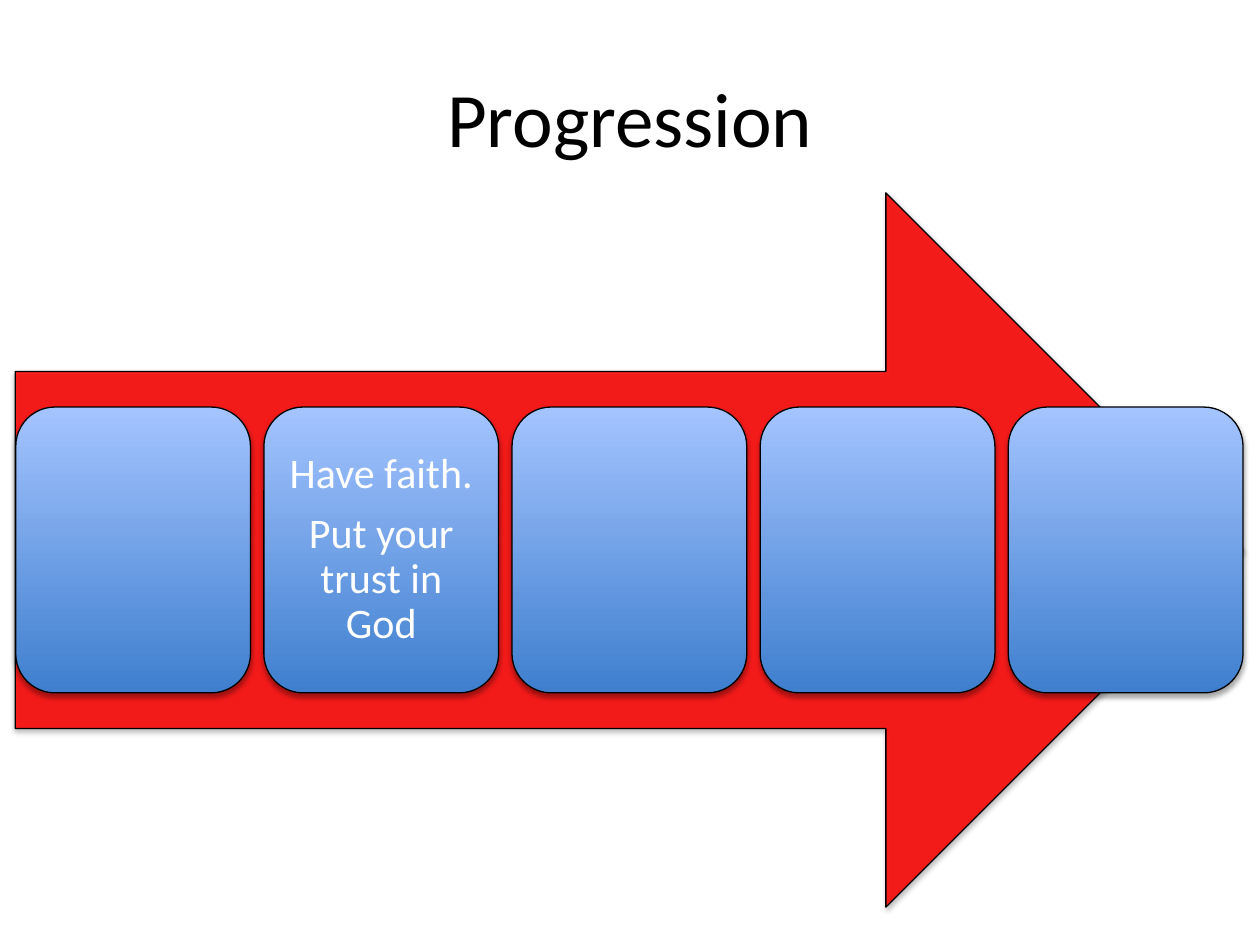
from dataclasses import dataclass

from lxml.etree import SubElement
from pptx import Presentation
from pptx.dml.color import RGBColor as RGB
from pptx.enum.shapes import MSO_SHAPE as Shape
from pptx.enum.text import MSO_ANCHOR as Anchor, PP_ALIGN as Align
from pptx.oxml.ns import qn
from pptx.util import Pt


@dataclass(frozen=True)
class Theme:
    font: str = "Calibri"
    title_size: int = 44
    step_size: int = 24
    black: RGB = RGB(0x00, 0x00, 0x00)
    white: RGB = RGB(0xFF, 0xFF, 0xFF)
    arrow: RGB = RGB(0xFF, 0x00, 0x00)
    step_bottom: RGB = RGB(0x3F, 0x7F, 0xCE)
    step_top: RGB = RGB(0xA4, 0xC4, 0xFF)


theme = Theme()


def write(shape, *lines, size, color, inset=7.2, line_spacing=1.0, space_after=0):
    """Put one centred paragraph per line into the shape."""
    frame = shape.text_frame
    frame.word_wrap = True
    frame.vertical_anchor = Anchor.MIDDLE
    frame.margin_left = frame.margin_right = Pt(inset)
    frame.margin_top = frame.margin_bottom = Pt(inset)
    frame.text = "\n".join(lines)
    for paragraph in frame.paragraphs:
        paragraph.alignment = Align.CENTER
        paragraph.line_spacing = line_spacing
        paragraph.space_after = Pt(space_after)
        font = paragraph.runs[0].font
        font.name = theme.font
        font.size = Pt(size)
        font.color.rgb = color


def outline_and_shadow(shape):
    shape.line.color.rgb = theme.black
    shape.line.width = Pt(0.75)
    shape.shadow.inherit = False
    effects = shape._element.spPr.find(qn("a:effectLst"))
    shadow = SubElement(effects, qn("a:outerShdw"), blurRad=str(Pt(3.1)),
                        dist=str(Pt(1.8)), dir="5400000", rotWithShape="0")
    color = SubElement(shadow, qn("a:srgbClr"), val=str(theme.black))
    SubElement(color, qn("a:alpha"), val="35000")


presentation = Presentation()
presentation.slide_width, presentation.slide_height = Pt(720), Pt(540)
slide = presentation.slides.add_slide(presentation.slide_layouts.get_by_name("Title Only"))

title = slide.shapes.title
title.left, title.top, title.width, title.height = Pt(36), Pt(21.6), Pt(648), Pt(90)
write(title, "Progression", size=theme.title_size, color=theme.black)

arrow = slide.shapes.add_shape(Shape.RIGHT_ARROW, Pt(8.7), Pt(110.2), Pt(701.6), Pt(408.2))
arrow.fill.solid()
arrow.fill.fore_color.rgb = theme.arrow
arrow_color = arrow._element.spPr.find(qn("a:solidFill")).find(qn("a:srgbClr"))
SubElement(arrow_color, qn("a:alpha"), val="85000")
outline_and_shadow(arrow)

steps = [(), ("Have faith.", "Put your trust in God"), (), (), ()]
step_left, step_top, step_pitch = 9, 232.6, 141.8
step_width, step_height = 134.1, 163.3

for index, lines in enumerate(steps):
    step = slide.shapes.add_shape(Shape.ROUNDED_RECTANGLE, Pt(step_left + index * step_pitch),
                                  Pt(step_top), Pt(step_width), Pt(step_height))
    step.fill.gradient()
    step.fill.gradient_angle = 90
    for stop, color, position in zip(step.fill.gradient_stops,
                                     (theme.step_bottom, theme.step_top), (0, 1)):
        stop.color.rgb = color
        stop.position = position
    outline_and_shadow(step)
    if lines:
        write(step, *lines, size=theme.step_size, color=theme.white,
              line_spacing=0.9, space_after=8.4)

presentation.save("out.pptx")
